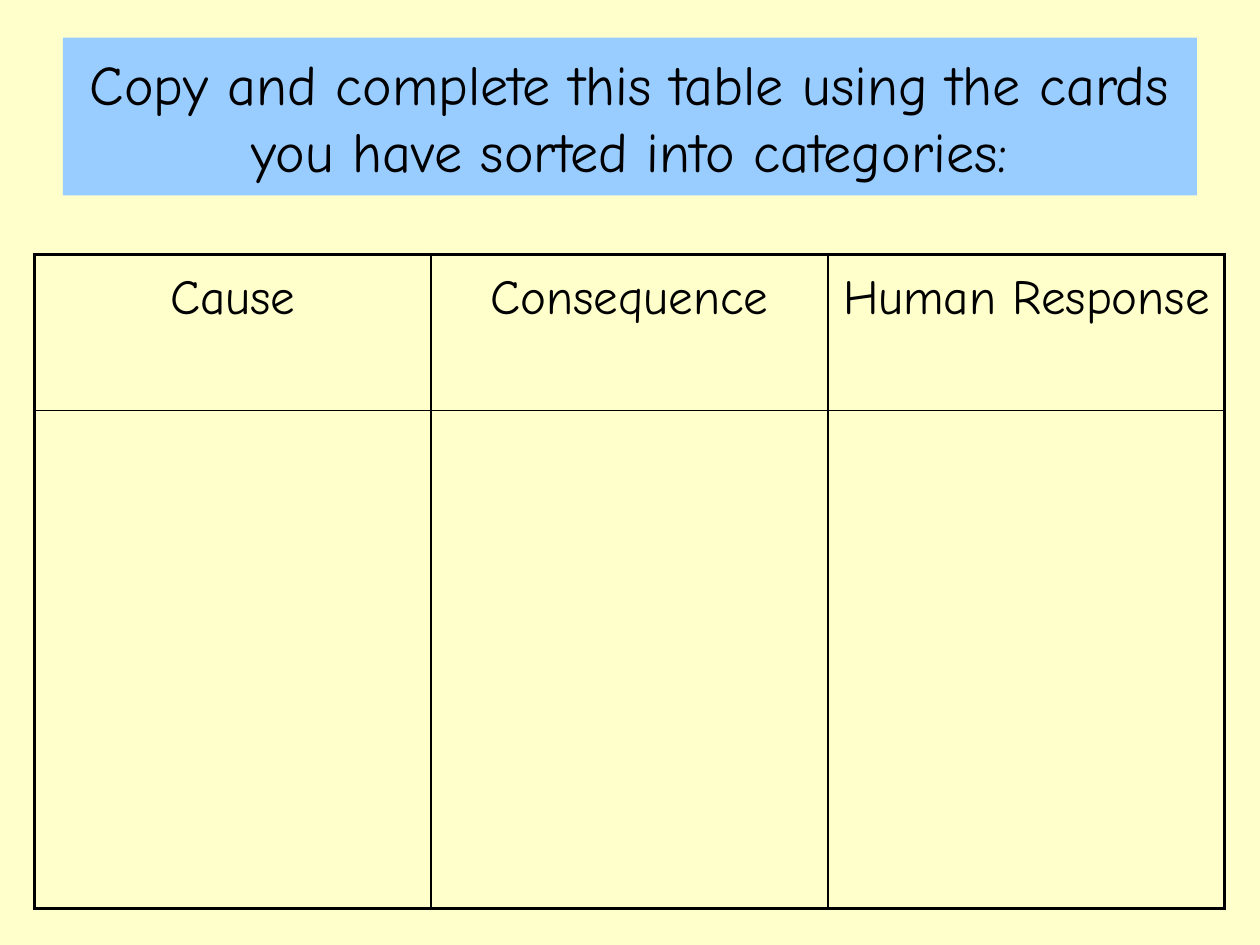
from dataclasses import dataclass

from lxml.etree import SubElement
from pptx import Presentation
from pptx.dml.color import RGBColor
from pptx.enum.shapes import MSO_SHAPE as Shape
from pptx.enum.text import MSO_ANCHOR as Anchor, PP_ALIGN as Align
from pptx.oxml.ns import qn
from pptx.slide import Slide
from pptx.table import _Cell as Cell
from pptx.text.text import _Paragraph as Paragraph
from pptx.util import Cm, Pt

CREAM = RGBColor(0xFF, 0xFF, 0xCC)
SKY = RGBColor(0x99, 0xCC, 0xFF)
BLACK = RGBColor(0, 0, 0)
FONT = "Comic Neue"
THIN, THICK = Pt(1), Pt(2.25)
COL_W = Cm(8)
ROW_HEIGHTS = (Cm(3.15), Cm(10.03))


@dataclass
class Column:
    """A table column named by its heading."""

    heading: str


COLUMNS = [Column("Cause"), Column("Consequence"), Column("Human Response")]


def add_run(p: Paragraph, text: str, size: int) -> None:
    """Add a centred run of black text."""
    p.alignment = Align.CENTER
    r = p.add_run()
    r.text = text
    r.font.name = FONT
    r.font.size = Pt(size)
    r.font.color.rgb = BLACK


def set_borders(cell: Cell, widths: dict[str, int]) -> None:
    """Draw solid black borders on the given sides of a cell."""
    tc_pr = cell._tc.get_or_add_tcPr()
    for side, width in widths.items():
        ln = SubElement(tc_pr, qn(f"a:ln{side}"), w=str(width))
        fill = SubElement(ln, qn("a:solidFill"))
        SubElement(fill, qn("a:srgbClr"), val=str(BLACK))


def add_title(s: Slide, text: str) -> None:
    """Add the instruction banner."""
    sp = s.shapes.add_shape(Shape.RECTANGLE, Cm(1.27), Cm(0.76), Cm(22.86), Cm(3.18))
    sp.shadow.inherit = False
    sp.fill.solid()
    sp.fill.fore_color.rgb = SKY
    sp.line.fill.background()
    tf = sp.text_frame
    tf.word_wrap = True
    tf.vertical_anchor = Anchor.MIDDLE
    add_run(tf.paragraphs[0], text, 32)


def add_category_table(s: Slide, columns: list[Column]) -> None:
    """Add the table with a thick outline and thin inner lines."""
    last_row, last_col = len(ROW_HEIGHTS) - 1, len(columns) - 1
    table = s.shapes.add_table(
        len(ROW_HEIGHTS), len(columns), Cm(0.69), Cm(5.13),
        COL_W * len(columns), sum(ROW_HEIGHTS),
    ).table
    table.first_row = table.horz_banding = False
    for col in table.columns:
        col.width = COL_W
    for i, height in enumerate(ROW_HEIGHTS):
        table.rows[i].height = height
        for j, column in enumerate(columns):
            cell = table.cell(i, j)
            set_borders(cell, {
                "L": THICK if j == 0 else THIN,
                "R": THICK if j == last_col else THIN,
                "T": THICK if i == 0 else THIN,
                "B": THICK if i == last_row else THIN,
            })
            cell.fill.background()
            if i == 0:
                p = cell.text_frame.paragraphs[0]
                p.line_spacing = 1.17
                p.space_before = Pt(7)
                add_run(p, column.heading, 28)


def main() -> None:
    """Build and save the slide."""
    prs = Presentation()
    prs.slide_width, prs.slide_height = Cm(25.4), Cm(19.05)
    s = prs.slides.add_slide(prs.slide_layouts[6])
    s.background.fill.solid()
    s.background.fill.fore_color.rgb = CREAM
    add_category_table(s, COLUMNS)
    add_title(s, "Copy and complete this table using the cards you have sorted into categories:")
    prs.save("out.pptx")


if __name__ == "__main__":
    main()
